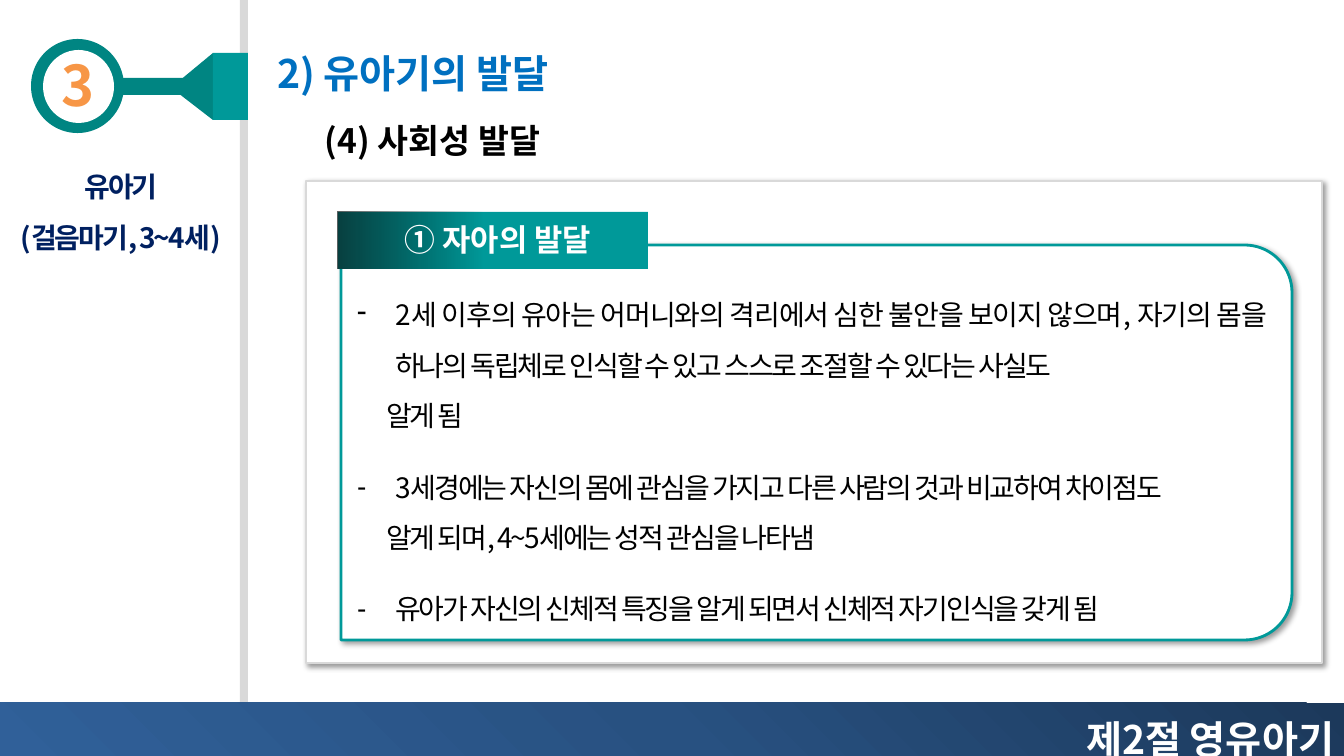
import lxml.etree
import pptx
import pptx.dml.color
import pptx.enum.shapes
import pptx.enum.text
import pptx.oxml.ns
import pptx.util

RGB = pptx.dml.color.RGBColor
SHAPE = pptx.enum.shapes.MSO_SHAPE
ALIGN = pptx.enum.text.PP_ALIGN
qn = pptx.oxml.ns.qn

FONT = "Noto Sans CJK KR"
WHITE, BLACK = RGB(255, 255, 255), RGB(0, 0, 0)
GREY, NAVY, BLUE = RGB(0xD9, 0xD9, 0xD9), RGB(0, 0x20, 0x60), RGB(0, 0x70, 0xC0)
TEAL, DARK_TEAL = RGB(0, 0x99, 0x99), RGB(0, 0x85, 0x82)
ORANGE, CHARCOAL = RGB(0xF7, 0x96, 0x46), RGB(0x0D, 0x0D, 0x0D)
# (position %, colour, opacity %)
FOOTER_STOPS = [(0, RGB(0x1C, 0x39, 0x5B), 100), (50, RGB(0x28, 0x51, 0x81), 100),
                (100, RGB(0x30, 0x60, 0x99), 100)]
SHADE_STOPS = [(0, CHARCOAL, 64), (100, BLACK, 0)]

CHAPTER = "3"
STAGE = ["유아기", "(걸음마기, 3~4세)"]
TITLE = "2) 유아기의 발달"
SUBTITLE = "(4) 사회성 발달"
TOPIC = "① 자아의 발달"
SECTION = "제2절 영유아기"
# (bulleted line, line that continues it)
POINTS = [
    ("2세 이후의 유아는 어머니와의 격리에서 심한 불안을 보이지 않으며, 자기의 몸을 "
     "하나의 독립체로 인식할 수 있고 스스로 조절할 수 있다는 사실도", "알게 됨"),
    ("3세경에는 자신의 몸에 관심을 가지고 다른 사람의 것과 비교하여 차이점도",
     "알게 되며, 4~5세에는 성적 관심을 나타냄"),
    ("유아가 자신의 신체적 특징을 알게 되면서 신체적 자기인식을 갖게 됨", None),
]

SLIDE_W, SLIDE_H = 1344, 756
SCALE = 12192000 / SLIDE_W
FRAME_LEFT, FRAME_TOP, FRAME_W, FRAME_H = 341, 245, 951, 395
HANGING, CONTINUED = 38, 29


def px(length):
    return pptx.util.Emu(round(length * SCALE))


def add_child(parent, tag, **attributes):
    child = lxml.etree.SubElement(parent, qn(tag))
    for key, value in attributes.items():
        child.set(key, str(value))
    return child


def add_color(parent, color, opacity):
    add_child(add_child(parent, "a:srgbClr", val=color), "a:alpha", val=opacity * 1000)


def paint(shape, fill, line=None):
    shape.shadow.inherit = False
    shape.fill.solid()
    shape.fill.fore_color.rgb = fill
    if line is None:
        shape.line.fill.background()
    else:
        shape.line.color.rgb = line
        shape.line.width = pptx.util.Pt(2)
    return shape


def add_block(kind, box, fill, line=None):
    return paint(slide.shapes.add_shape(kind, *map(px, box)), fill, line)


def set_gradient(shape, stops, angle):
    shape.fill.gradient()
    gradient = shape._element.spPr.find(qn("a:gradFill"))
    for child in list(gradient):
        gradient.remove(child)
    stop_list = add_child(gradient, "a:gsLst")
    for position, color, opacity in stops:
        add_color(add_child(stop_list, "a:gs", pos=position * 1000), color, opacity)
    add_child(gradient, "a:lin", ang=angle * 60000, scaled=0)


def cast_shadow(shape):
    effects = shape._element.spPr.find(qn("a:effectLst"))
    shadow = add_child(effects, "a:outerShdw", blurRad=pptx.util.Pt(4), dist=pptx.util.Pt(3),
                       dir=45 * 60000, algn="tl", rotWithShape=0)
    add_color(shadow, BLACK, 40)


def set_font(paragraph, size, color, bold=True, tracking=0):
    """Set the paragraph's font, East Asian face included; tracking is in points."""
    font = paragraph.font
    font.size, font.bold, font.name = pptx.util.Pt(size), bold, FONT
    font.color.rgb = color
    properties = font._element
    add_child(properties, "a:ea", typeface=FONT)
    if tracking:
        properties.set("spc", str(round(tracking * 100)))


def set_text(holder, lines, size, color, align=ALIGN.LEFT, spacing=1.0, wrap=False, tracking=0):
    frame = holder.text_frame
    frame.word_wrap = wrap
    frame.auto_size = pptx.enum.text.MSO_AUTO_SIZE.NONE
    frame.vertical_anchor = pptx.enum.text.MSO_ANCHOR.TOP
    frame.text = "\n".join(lines)
    for paragraph in frame.paragraphs:
        paragraph.alignment, paragraph.line_spacing = align, spacing
        set_font(paragraph, size, color, tracking=tracking)
    return holder


def add_label(box, *text, **style):
    return set_text(slide.shapes.add_textbox(*map(px, box)), *text, **style)


def place(placeholder, box):
    """Move a placeholder to its box, in front of everything drawn so far."""
    placeholder.left, placeholder.top, placeholder.width, placeholder.height = map(px, box)
    slide.shapes._spTree.append(placeholder._element)


def add_point_line(paragraph, text, bulleted, gap):
    paragraph.text = text
    paragraph.alignment = ALIGN.JUSTIFY if bulleted else ALIGN.LEFT
    paragraph.line_spacing = 1.5
    paragraph.space_before = pptx.util.Pt(gap)
    properties = paragraph._p.get_or_add_pPr()
    properties.set("marL", str(px(HANGING if bulleted else CONTINUED)))
    properties.set("indent", str(px(-HANGING if bulleted else 0)))
    if bulleted:
        add_child(properties, "a:buFontTx")
        add_child(properties, "a:buChar", char="-")
    else:
        add_child(properties, "a:buNone")
    set_font(paragraph, 20, BLACK, bold=False, tracking=-1.5)


deck = pptx.Presentation()
deck.slide_width, deck.slide_height = px(SLIDE_W), px(SLIDE_H)
slide = deck.slides.add_slide(deck.slide_layouts[1])
title, points = slide.placeholders

# Side rail and chapter badge
add_block(SHAPE.RECTANGLE, (240, 0, 8, 712), GREY)
add_block(SHAPE.OVAL, (31, 39, 93, 94), DARK_TEAL)
add_block(SHAPE.OVAL, (43, 50, 71, 73), WHITE)
funnel = slide.shapes.build_freeform(178, 82, scale=SCALE)
funnel.add_line_segments([(213, 53), (213, 120), (178, 93)], close=True)
paint(funnel.convert_to_shape(), DARK_TEAL)
add_block(SHAPE.RECTANGLE, (213, 53, 35, 67), TEAL)
add_block(SHAPE.RECTANGLE, (118, 78, 78, 17), DARK_TEAL)
chapter = add_label((52, 46, 53, 78), [CHAPTER], 40, ORANGE, align=ALIGN.CENTER)
outline = lxml.etree.Element(qn("a:ln"), w=str(pptx.util.Pt(1.4)))
add_color(add_child(outline, "a:solidFill"), WHITE, 100)
chapter.text_frame.paragraphs[0].font._element.insert(0, outline)

# Footer, stage and headings
footer = add_block(SHAPE.RECTANGLE, (0, 703, SLIDE_W, SLIDE_H - 703), WHITE)
set_gradient(footer, FOOTER_STOPS, 135)
add_label((648, 687, 696, 82), [SECTION], 28, WHITE, align=ALIGN.RIGHT, spacing=1.5, wrap=True)
add_label((-1, 148, 244, 106), STAGE, 20, NAVY, align=ALIGN.CENTER, spacing=1.5, wrap=True,
          tracking=-1.5)
set_text(title, [TITLE], 28, BLUE)
place(title, (267, 44, 323, 58))
add_label((315, 115, 258, 50), [SUBTITLE], 24, BLACK)

# Card with the topic tab
cast_shadow(add_block(SHAPE.RECTANGLE, (306, 181, 1016, 482), WHITE, GREY))
shift = (FRAME_W - FRAME_H) / 2
frame = add_block(SHAPE.ROUND_2_SAME_RECTANGLE,
                  (FRAME_LEFT + shift, FRAME_TOP - shift, FRAME_H, FRAME_W), WHITE, TEAL)
frame.rotation = 90
frame.adjustments[0], frame.adjustments[1] = 0.12, 0
cast_shadow(frame)
add_block(SHAPE.RECTANGLE, (338, 212, 310, 57), TEAL)
set_gradient(add_block(SHAPE.RECTANGLE, (338, 212, 146, 57), BLACK), SHADE_STOPS, 0)
add_label((395, 216, 229, 47), [TOPIC], 22, WHITE)

# Points
place(points, (347, 276, 928, 356))
body = points.text_frame
body.word_wrap = True
body.auto_size = pptx.enum.text.MSO_AUTO_SIZE.NONE
for number, (point, continuation) in enumerate(POINTS):
    first = body.add_paragraph() if number else body.paragraphs[0]
    add_point_line(first, point, True, 15 if number else 0)
    if continuation:
        add_point_line(body.add_paragraph(), continuation, False, 0)

deck.save("out.pptx")
